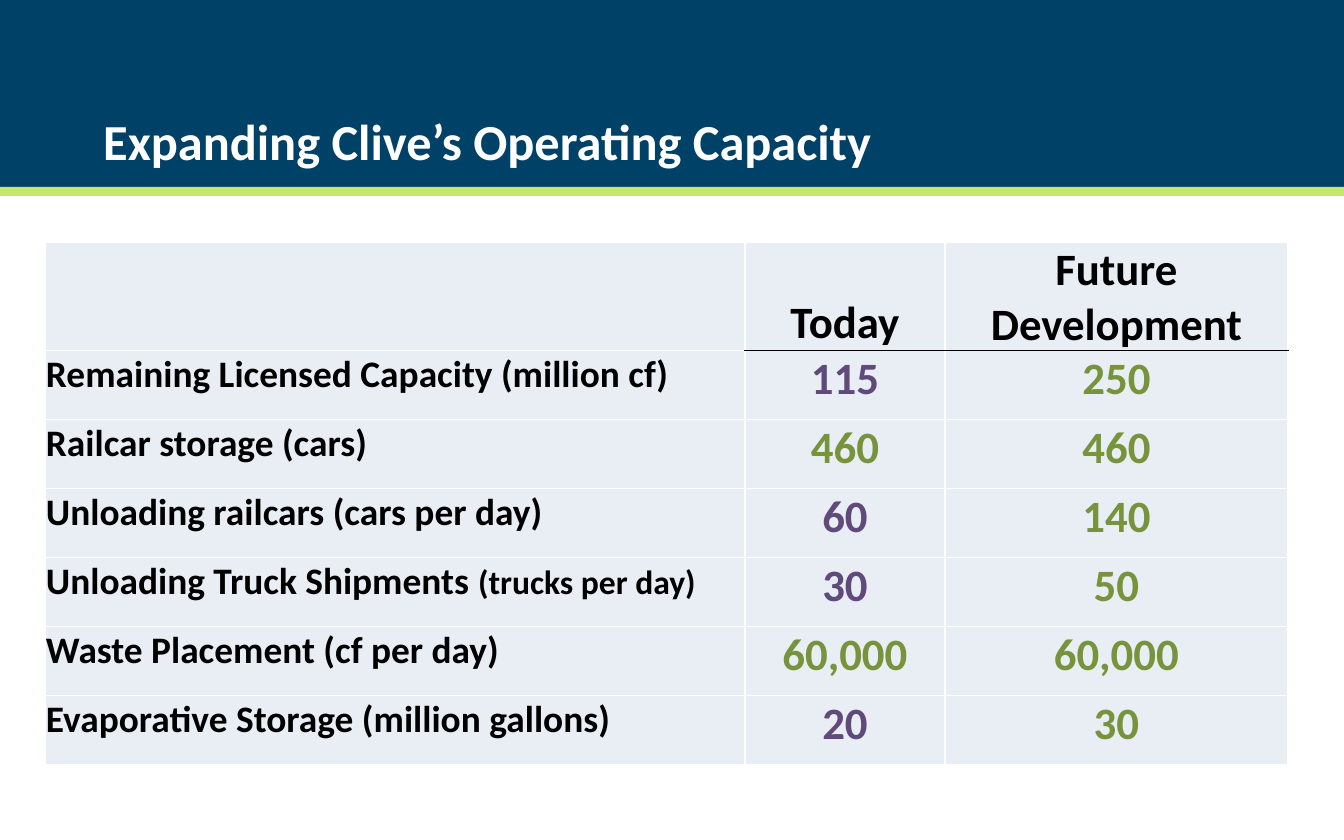
from lxml.etree import SubElement
from pptx import Presentation
from pptx.dml.color import RGBColor
from pptx.enum.shapes import MSO_SHAPE
from pptx.enum.text import MSO_ANCHOR, PP_ALIGN
from pptx.oxml.ns import qn
from pptx.util import Pt

NAVY = RGBColor(0x00, 0x41, 0x68)
LIME = RGBColor(0xC5, 0xE8, 0x6C)
PALE = RGBColor(0xE9, 0xED, 0xF4)
WHITE = RGBColor(0xFF, 0xFF, 0xFF)
BLACK = RGBColor(0x00, 0x00, 0x00)
PURPLE = RGBColor(0x60, 0x4A, 0x7B)
GREEN = RGBColor(0x77, 0x93, 0x3C)

FONT = "Calibri"
WIDTH, HEIGHT = 1344, 840
COLS = (700, 200, 343)
HEAD_H, ROW_H = 97, 69
HEADS = ("", "Today", "Future\nDevelopment")
# label, small note after it, today, future
ROWS = (
    ("Remaining Licensed Capacity (million cf)", "", "115", "250"),
    ("Railcar storage (cars)", "", "460", "460"),
    ("Unloading railcars (cars per day)", "", "60", "140"),
    ("Unloading Truck Shipments ", "(trucks per day)", "30", "50"),
    ("Waste Placement (cf per day)", "", "60,000", "60,000"),
    ("Evaporative Storage (million gallons)", "", "20", "30"),
)


def px(n):
    """Turn px, at 134.4 to the inch, into EMU."""
    return round(n * 914400 / 134.4)


def style(run, size, color):
    font = run.font
    font.name, font.size, font.bold = FONT, Pt(size), True
    font.color.rgb = color


def add_band(slide, top, height, color):
    band = slide.shapes.add_shape(
        MSO_SHAPE.RECTANGLE, 0, px(top), px(WIDTH), px(height))
    band.shadow.inherit = False
    band.fill.solid()
    band.fill.fore_color.rgb = color
    band.line.fill.background()


def add_title(slide, text):
    box = slide.shapes.add_textbox(px(90), px(66), px(918), px(111))
    frame = box.text_frame
    frame.word_wrap = True
    frame.vertical_anchor = MSO_ANCHOR.BOTTOM
    frame.text = text
    style(frame.paragraphs[0].runs[0], 27, WHITE)


def add_edge(cell, side, color):
    props = cell._tc.get_or_add_tcPr()
    line = SubElement(props, qn("a:ln" + side), w=str(Pt(1)))
    fill = SubElement(line, qn("a:solidFill"))
    SubElement(fill, qn("a:srgbClr"), val=str(color))


def paint(cell, top, bottom):
    """Give a cell its four edges and its fill."""
    for side, color in zip("LRTB", (WHITE, WHITE, top, bottom)):
        add_edge(cell, side, color)
    cell.fill.solid()
    cell.fill.fore_color.rgb = PALE


def write(cell, text, size, color, align=PP_ALIGN.CENTER,
          anchor=MSO_ANCHOR.TOP):
    cell.margin_left = cell.margin_right = cell.margin_top = px(1)
    cell.margin_bottom = 0
    cell.vertical_anchor = anchor
    para = cell.text_frame.paragraphs[0]
    para.text = text
    para.alignment = align
    for run in para.runs:
        style(run, size, color)
    return para


def add_grid(slide):
    count = len(ROWS) + 1
    frame = slide.shapes.add_table(
        count, len(COLS), px(45), px(242), px(sum(COLS)),
        px(HEAD_H + ROW_H * len(ROWS)))
    table = frame.table
    table.first_row = table.horz_banding = False
    for col, width in zip(table.columns, COLS):
        col.width = px(width)
    for i, row in enumerate(table.rows):
        row.height = px(ROW_H if i else HEAD_H)
        for j, cell in enumerate(row.cells):
            top = BLACK if i == 1 and j else WHITE
            bottom = BLACK if i == 0 and j else WHITE
            paint(cell, top, bottom)

    for j, head in enumerate(HEADS):
        if head:
            write(table.cell(0, j), head, 24, BLACK,
                  anchor=MSO_ANCHOR.BOTTOM)
    for i, (label, note, today, future) in enumerate(ROWS, 1):
        para = write(table.cell(i, 0), label, 20, BLACK, PP_ALIGN.LEFT)
        if note:
            run = para.add_run()
            run.text = note
            style(run, 18, BLACK)
        # today is green once it meets the future level
        write(table.cell(i, 1), today, 24,
              GREEN if today == future else PURPLE)
        write(table.cell(i, 2), future, 24, GREEN)


def main():
    deck = Presentation()
    deck.slide_width, deck.slide_height = px(WIDTH), px(HEIGHT)
    slide = deck.slides.add_slide(deck.slide_layouts[6])
    add_band(slide, 0, 196, NAVY)
    add_band(slide, 187, 9, LIME)
    add_title(slide, "Expanding Clive’s Operating Capacity")
    add_grid(slide)
    deck.save("out.pptx")


if __name__ == "__main__":
    main()
